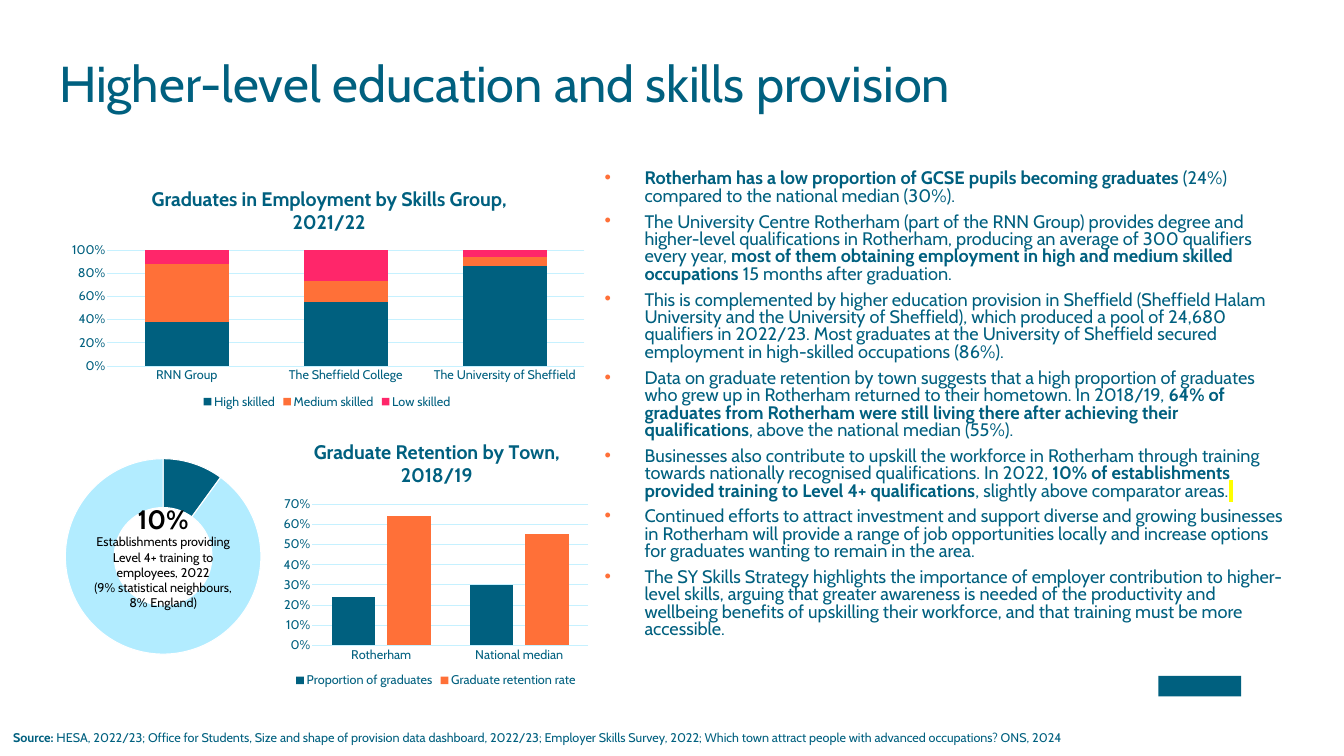
from lxml import etree
from pptx import Presentation
from pptx import util as u
from pptx.chart.data import CategoryChartData
from pptx.dml.color import RGBColor
from pptx.enum import chart as charts, shapes, text
from pptx.oxml import parse_xml
from pptx.oxml.ns import nsdecls, qn

PX = 9144  # 100 px to the inch
FONT = "Cabin"
TEAL = RGBColor(0x00, 0x60, 0x7F)
ORANGE = RGBColor(0xFF, 0x70, 0x38)
PINK = RGBColor(0xFF, 0x26, 0x6A)
PALE = RGBColor(0xB2, 0xEC, 0xFF)
GRID = RGBColor(0xC6, 0xF1, 0xFF)
BLACK = RGBColor(0x00, 0x00, 0x00)
WHITE = RGBColor(0xFF, 0xFF, 0xFF)

deck = Presentation()
deck.slide_width, deck.slide_height = 2665 * PX, 1500 * PX
page = deck.slides.add_slide(deck.slide_layouts[6])


def add_text(place, paragraphs, color=TEAL, inset=True):
    """Add a text box; each paragraph is a list of (words, size, bold) runs."""
    box = page.shapes.add_textbox(*[n * PX for n in place])
    frame = box.text_frame
    frame.word_wrap = True
    if not inset:
        frame.margin_left = frame.margin_top = frame.margin_right = frame.margin_bottom = 0
    for i, runs in enumerate(paragraphs):
        para = frame.paragraphs[0] if i == 0 else frame.add_paragraph()
        for words, size, bold in runs:
            span = para.add_run()
            span.text = words
            span.font.size = u.Pt(size)
            span.font.bold = bold
            span.font.color.rgb = color
            span.font.name = FONT
    return frame


def set_layout(element, inner=False, **parts):
    """Place a chart part by fractions of the chart's size."""
    for old in element.findall(qn("c:layout")):
        element.remove(old)
    target = '<c:layoutTarget val="inner"/>' if inner else ""
    modes = '<c:xMode val="edge"/><c:yMode val="edge"/>'
    values = "".join(f'<c:{key} val="{value}"/>' for key, value in parts.items())
    layout = parse_xml(
        f'<c:layout {nsdecls("c")}><c:manualLayout>{target}{modes}{values}'
        "</c:manualLayout></c:layout>")
    if inner:
        element.insert(0, layout)
    else:
        element.find(qn("c:tx")).addnext(layout)


# Logo placeholder
mark = page.shapes.add_shape(
    shapes.MSO_SHAPE.RECTANGLE, *[n * PX for n in (2297, 1341, 164, 41)])
mark.shadow.inherit = False
mark.fill.solid()
mark.fill.fore_color.rgb = TEAL
mark.line.fill.background()

# Title
title = add_text((117, 105, 2299, 172),
                 [[("Higher-level education and skills provision", 72, False)]], inset=False)
title.paragraphs[0].line_spacing = u.Pt(85)

# Findings: runs alternate as (words, bold)
findings = [
    [("Rotherham has a low proportion of GCSE pupils becoming graduates ", True),
     ("(24%) compared to the national median (30%).", False)],
    [("The University Centre Rotherham (part of the RNN Group) provides degree and higher-level "
      "qualifications in Rotherham, producing an average of 300 qualifiers every year, ", False),
     ("most of them obtaining employment in high and medium skilled occupations ", True),
     ("15 months after graduation.", False)],
    [("This is complemented by higher education provision in Sheffield (Sheffield Halam University "
      "and the University of Sheffield), which produced a pool of 24,680 qualifiers in 2022/23. "
      "Most graduates at the University of Sheffield secured employment in high-skilled "
      "occupations (86%).", False)],
    [("Data on graduate retention by town suggests that a high proportion of graduates who grew up "
      "in Rotherham returned to their hometown. In 2018/19, ", False),
     ("64% of graduates from Rotherham were still living there after achieving their "
      "qualifications", True),
     (", above the national median (55%).", False)],
    [("Businesses also contribute to upskill the workforce in Rotherham through training towards "
      "nationally recognised qualifications. In 2022, ", False),
     ("10% of establishments provided training to Level 4+ qualifications", True),
     (", slightly above comparator areas.", False),
     (" ", False)],
    [("Continued efforts to attract investment and support diverse and growing businesses in "
      "Rotherham will provide a range of job opportunities locally and increase options for "
      "graduates wanting to remain in the area.", False)],
    [("The SY Skills Strategy highlights the importance of employer contribution to higher-level "
      "skills, arguing that greater awareness is needed of the productivity and wellbeing benefits "
      "of upskilling their workforce, and that training must be more accessible.", False)],
]
body = add_text((1199, 339, 1350, 1040),
                [[(words, 25.9, bold) for words, bold in runs] for runs in findings], inset=False)
for para in body.paragraphs:
    para.line_spacing = 0.8
    para.space_after = u.Pt(12)
    props = para._p.get_or_add_pPr()
    props.set("marL", str(79 * PX))
    props.set("indent", str(-79 * PX))
    color = etree.SubElement(props, qn("a:buClr"))
    etree.SubElement(color, qn("a:srgbClr")).set("val", str(ORANGE))
    etree.SubElement(props, qn("a:buFont")).set("typeface", "Arial")
    etree.SubElement(props, qn("a:buChar")).set("char", "•")

# Yellow highlight on the closing space of the fifth finding
span = body.paragraphs[4].runs[-1]
span._r.rPr.find(qn("a:solidFill")).addnext(parse_xml(
    f'<a:highlight {nsdecls("a")}><a:srgbClr val="FFFF00"/></a:highlight>'))

# Column charts
columns = [
    dict(place=(117, 338, 1063, 479), kind=charts.XL_CHART_TYPE.COLUMN_STACKED_100, overlap=100,
         title="Graduates in Employment by Skills Group,\n2021/22", title_at=dict(x=0.17, y=0.06),
         plot_at=dict(x=0.09, y=0.33, w=0.89, h=0.48), step=0.2, top=1,
         cats=["RNN Group", "The Sheffield College", "The University of Sheffield"],
         series=[("High skilled", (38, 55, 86), TEAL), ("Medium skilled", (50, 18, 8), ORANGE),
                 ("Low skilled", (12, 27, 6), PINK)]),
    dict(place=(550, 842, 629, 528), kind=charts.XL_CHART_TYPE.COLUMN_CLUSTERED, overlap=-27,
         title="Graduate Retention by Town,\n2018/19", title_at=dict(x=0.11, y=0.05),
         plot_at=dict(x=0.11, y=0.3, w=0.87, h=0.53), step=0.1, top=0.7,
         cats=["Rotherham", "National median"],
         series=[("Proportion of graduates", (0.24, 0.3), TEAL),
                 ("Graduate retention rate", (0.64, 0.55), ORANGE)]),
]
for item in columns:
    data = CategoryChartData()
    data.categories = item["cats"]
    for name, values, _ in item["series"]:
        data.add_series(name, values)
    chart = page.shapes.add_chart(item["kind"], *[n * PX for n in item["place"]], data).chart
    chart.font.size, chart.font.name = u.Pt(18), FONT
    chart.font.color.rgb = TEAL

    chart.has_title = True
    heading = chart.chart_title
    heading.include_in_layout = False
    heading.text_frame.text = item["title"]
    for para in heading.text_frame.paragraphs:
        font = para.runs[0].font
        font.size, font.bold, font.name = u.Pt(28), True, FONT
        font.color.rgb = TEAL
    set_layout(heading._element, **item["title_at"])
    set_layout(chart._chartSpace.chart.plotArea, inner=True, **item["plot_at"])

    chart.has_legend = True
    chart.legend.position = charts.XL_LEGEND_POSITION.BOTTOM
    chart.legend.include_in_layout = False

    plot = chart.plots[0]
    plot.gap_width, plot.overlap, plot.vary_by_categories = 90, item["overlap"], False
    for series, (_, _, color) in zip(plot.series, item["series"]):
        series.format.fill.solid()
        series.format.fill.fore_color.rgb = color

    levels = chart.value_axis
    levels.minimum_scale, levels.maximum_scale = 0, item["top"]
    levels.major_unit = item["step"]
    levels.tick_labels.number_format = "0%"
    levels.tick_labels.number_format_is_linked = False
    levels.format.line.fill.background()
    for axis in (levels, chart.category_axis):
        axis.major_tick_mark = axis.minor_tick_mark = charts.XL_TICK_MARK.NONE
    for line in (levels.major_gridlines.format.line, chart.category_axis.format.line):
        line.color.rgb = GRID
        line.width = u.Pt(0.75)

# Training doughnut
data = CategoryChartData()
data.categories = ["1", "2"]
data.add_series("Series 1", (10, 90))
ring = page.shapes.add_chart(
    charts.XL_CHART_TYPE.DOUGHNUT, *[n * PX for n in (117, 842, 413, 524)], data).chart
ring.has_title = ring.has_legend = False
ring.font.size, ring.font.name = u.Pt(10), FONT
ring.font.color.rgb = TEAL
ring.plots[0].vary_by_categories = False
ring.plots[0]._element.find(qn("c:holeSize")).set("val", "75")
set_layout(ring._chartSpace.chart.plotArea, inner=True, x=0.03, y=0.13, w=0.94, h=0.74)
for i, color in enumerate((TEAL, PALE)):
    look = ring.plots[0].series[0].points[i].format
    look.fill.solid()
    look.fill.fore_color.rgb = color
    look.line.color.rgb = WHITE
    look.line.width = u.Pt(1.5)

# Doughnut label
label = add_text((171, 965, 305, 277), [
    [("10%", 38, True)],
    [("Establishments providing Level 4+ training to employees, 2022", 18, False)],
    [("(9% statistical neighbours, 8% England)", 18, False)]], color=BLACK)
label.vertical_anchor = text.MSO_ANCHOR.MIDDLE
for para in label.paragraphs:
    para.alignment = text.PP_ALIGN.CENTER

# Source line
add_text((16, 1444, 2596, 40), [[
    ("Source: ", 18, True),
    ("HESA, 2022/23; Office for Students, Size and shape of provision data dashboard, 2022/23; "
     "Employer Skills Survey, 2022; Which town attract people with advanced occupations? ONS, 2024",
     18, False)]])

deck.save("out.pptx")
